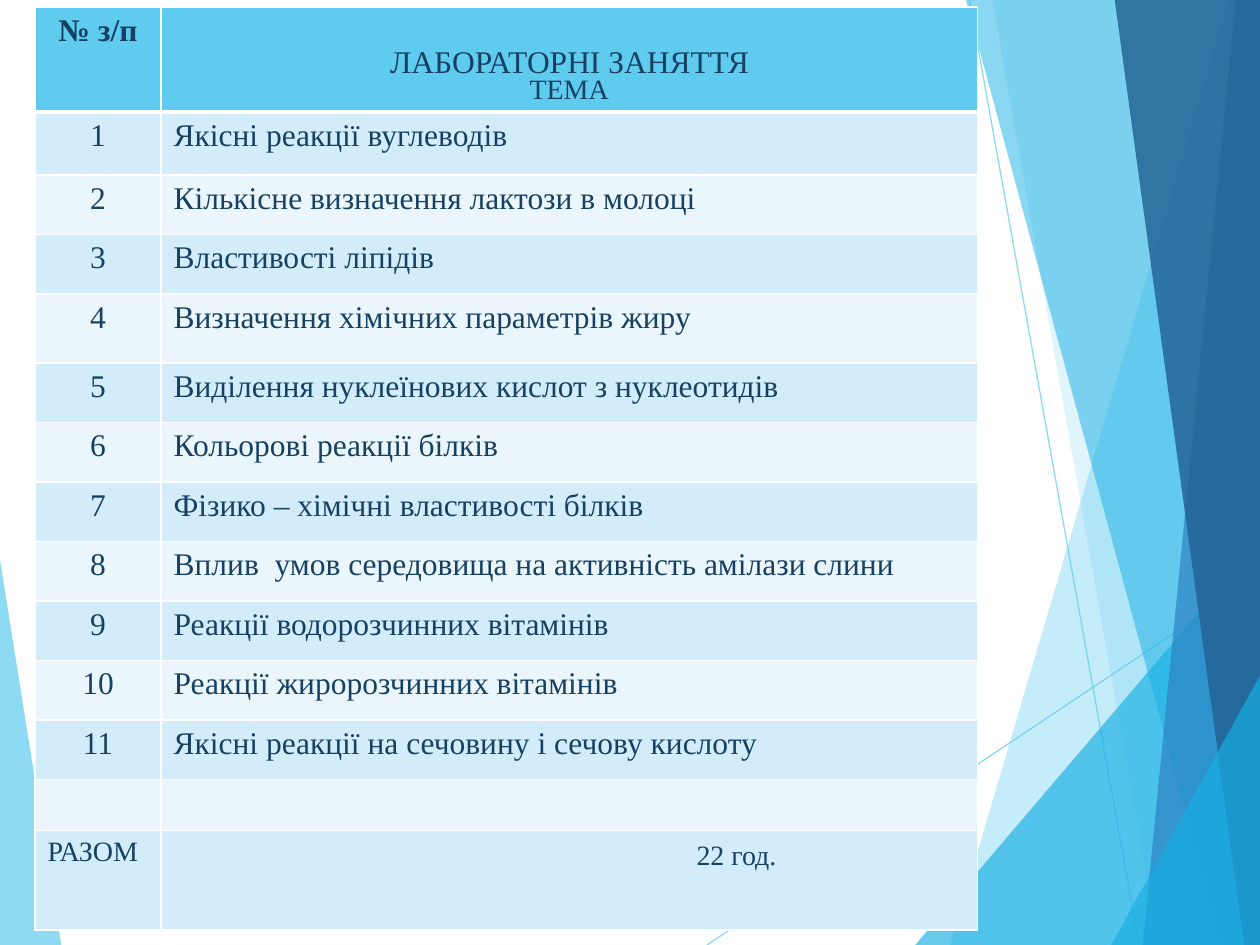
from lxml import etree
from pptx import Presentation
from pptx import util as u
from pptx.dml import color
from pptx.enum import shapes, text
from pptx.oxml import ns

COLORS = {
    "sky": "5FCBEF",
    "cyan": "17B0E4",
    "blue": "2E83C3",
    "navy": "226292",
    "ink": "174162",
    "band": "D2ECF9",
    "pale": "EAF6FC",
    "white": "FFFFFF",
}
FONT = "Times New Roman"
TOPICS = [
    "Якісні реакції вуглеводів",
    "Кількісне визначення лактози в молоці",
    "Властивості ліпідів",
    "Визначення хімічних параметрів жиру",
    "Виділення нуклеїнових кислот з нуклеотидів",
    "Кольорові реакції білків",
    "Фізико – хімічні властивості білків",
    "Вплив  умов середовища на активність амілази слини",
    "Реакції водорозчинних вітамінів",
    "Реакції жиророзчинних вітамінів",
    "Якісні реакції на сечовину і сечову кислоту",
]
ROW_HEIGHTS = [60, 36, 34, 34, 39.5] + [34] * 7 + [28.5, 57]
FACETS = [
    ("sky", 36, [(702, 0), (543, 540), (720, 540), (720, 0)]),
    ("sky", 20, [(567, 0), (662, 540), (720, 540), (720, 0)]),
    ("cyan", 66, [(523, 540), (720, 309), (720, 540)]),
    ("cyan", 50, [(552, 0), (698, 540), (720, 540), (720, 0)]),
    ("blue", 70, [(706, 0), (653, 540), (720, 540), (720, 0)]),
    ("navy", 82, [(637, 0), (711, 540), (720, 540), (720, 0)]),
    ("cyan", 66, [(635, 540), (720, 386), (720, 540)]),
]


def paint(fill, name, opacity=100):
    fill.solid()
    fill.fore_color.rgb = color.RGBColor.from_string(COLORS[name])
    if opacity < 100:
        for clr in fill._xPr.iter(ns.qn("a:srgbClr")):
            etree.SubElement(clr, ns.qn("a:alpha"), val=str(opacity * 1000))


def write(frame, words, size=18, bold=False, align=text.PP_ALIGN.LEFT):
    para = frame.paragraphs[0]
    para.alignment = align
    span = para.add_run()
    span.text = words
    span.font.name = FONT
    span.font.size = u.Pt(size)
    span.font.bold = bold
    span.font.color.rgb = color.RGBColor.from_string(COLORS["ink"])


def add_facet(page, left, top, name, opacity, corners):
    points = [(u.Pt(left + x), u.Pt(top + y)) for x, y in corners]
    builder = page.shapes.build_freeform(*points[0])
    builder.add_line_segments(points[1:], close=True)
    facet = builder.convert_to_shape()
    facet.shadow.inherit = False
    paint(facet.fill, name, opacity)
    facet.line.fill.background()


def add_ray(page, left, top, start, end):
    ray = page.shapes.add_connector(
        shapes.MSO_CONNECTOR.STRAIGHT,
        u.Pt(left + start[0]), u.Pt(top + start[1]),
        u.Pt(left + end[0]), u.Pt(top + end[1]))
    ray.line.width = u.Pt(0.75)
    paint(ray.line.fill, "sky", 70)
    etree.SubElement(ray._element.spPr, ns.qn("a:effectLst"))


def add_backdrop(page, left, top):
    add_facet(page, left, top, "sky", 70, [(0, 320), (35, 540), (0, 540)])
    add_ray(page, left, top, (404, 540), (720, 329))
    add_ray(page, left, top, (554, 0), (651, 540))
    for facet in FACETS:
        add_facet(page, left, top, *facet)


def set_borders(cell, top=1, bottom=1):
    props = cell._tc.get_or_add_tcPr()
    for side, width in (("L", 1), ("R", 1), ("T", top), ("B", bottom)):
        line = etree.SubElement(props, ns.qn("a:ln" + side), w=str(u.Pt(width)))
        fill = etree.SubElement(line, ns.qn("a:solidFill"))
        etree.SubElement(fill, ns.qn("a:srgbClr"), val=COLORS["white"])


def add_schedule(page, left, top, width):
    number_width = 72
    center = text.PP_ALIGN.CENTER
    last = len(ROW_HEIGHTS) - 1
    table = page.shapes.add_table(
        len(ROW_HEIGHTS), 2, u.Pt(left), u.Pt(top),
        u.Pt(width), u.Pt(sum(ROW_HEIGHTS))).table
    table.columns[0].width = u.Pt(number_width)
    table.columns[1].width = u.Pt(width - number_width)
    for index, height in enumerate(ROW_HEIGHTS):
        row = table.rows[index]
        row.height = u.Pt(height)
        shade = "sky" if index == 0 else "band" if index % 2 else "pale"
        for cell in row.cells:
            set_borders(cell, top=3 if index == 1 else 1,
                        bottom=3 if index == 0 else 1)
            paint(cell.fill, shade)
    write(table.cell(0, 0).text_frame, "№ з/п", bold=True, align=center)
    heading = table.cell(0, 1)
    heading.vertical_anchor = text.MSO_ANCHOR.BOTTOM
    write(heading.text_frame, "ТЕМА", size=16, align=center)
    for number, topic in enumerate(TOPICS, 1):
        write(table.cell(number, 0).text_frame, str(number), align=center)
        write(table.cell(number, 1).text_frame, topic)
    write(table.cell(last, 0).text_frame, "РАЗОМ", size=16)
    total = table.cell(last, 1)
    total.margin_left = u.Pt(306)
    total.margin_top = u.Pt(6)
    write(total.text_frame, "22 год.", size=16)


def place_title(page, left, top, width, height):
    box = page.shapes.title
    box.left, box.top = u.Pt(left), u.Pt(top)
    box.width, box.height = u.Pt(width), u.Pt(height)
    frame = box.text_frame
    frame.word_wrap = True
    frame.auto_size = text.MSO_AUTO_SIZE.NONE
    frame.vertical_anchor = text.MSO_ANCHOR.BOTTOM
    write(frame, "ЛАБОРАТОРНІ ЗАНЯТТЯ", align=text.PP_ALIGN.CENTER)
    box._element.getparent().append(box._element)


def main():
    deck = Presentation()
    deck.slide_width, deck.slide_height = u.Pt(720), u.Pt(540)
    page = deck.slides.add_slide(deck.slide_layouts[5])
    add_backdrop(page, 0, 0)
    add_schedule(page, 20, 4, 538.5)
    place_title(page, 145, -2, 361, 51)
    deck.save("out.pptx")


if __name__ == "__main__":
    main()
